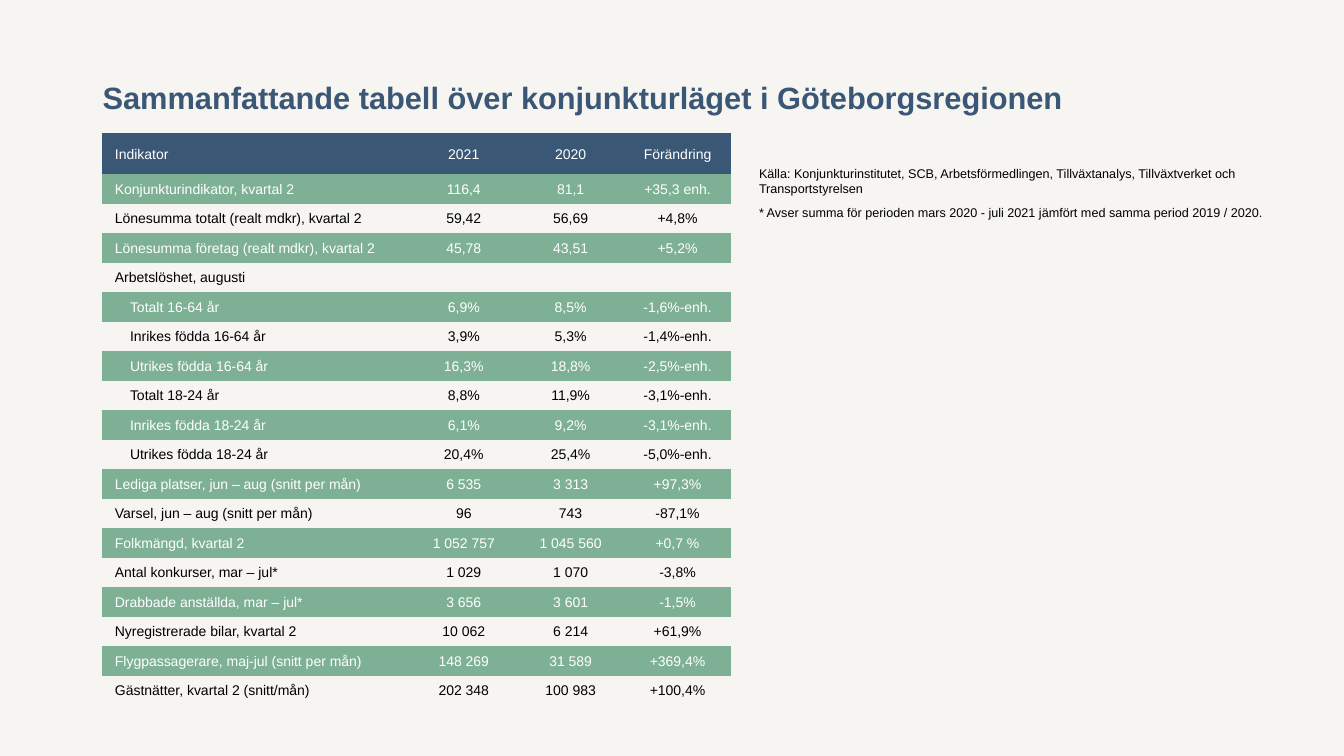
from lxml import etree
from pptx import Presentation, util as u
from pptx.dml import color
from pptx.enum import text
from pptx.oxml import ns

COLORS = {"background": "F6F5F1", "navy": "3B5776", "green": "7DB094",
          "white": "FFFFFF", "black": "000000"}
NO_GRID_STYLE = "{2D5ABB26-0587-4C30-8999-92F81FD0307C}"


def write(paragraph, words, size=10, ink="black", bold=False,
          align=text.PP_ALIGN.LEFT, spacing=None, after=0):
    paragraph.alignment = align
    paragraph.line_spacing = spacing
    paragraph.space_after = u.Pt(after)
    if not words:
        etree.SubElement(paragraph._p, ns.qn("a:endParaRPr"), sz=str(size * 100))
        return
    run = paragraph.add_run()
    run.text = words
    run.font.name = "Arial"
    run.font.size = u.Pt(size)
    run.font.bold = bold
    run.font.color.rgb = color.RGBColor.from_string(COLORS[ink])


deck = Presentation()
deck.slide_width, deck.slide_height = u.Inches(13.33), u.Inches(7.5)
slide = deck.slides.add_slide(deck.slide_layouts[6])
slide.background.fill.solid()
slide.background.fill.fore_color.rgb = color.RGBColor.from_string(COLORS["background"])

indicators = [
    ("Indikator", "2021", "2020", "Förändring"),
    ("Konjunkturindikator, kvartal 2", "116,4", "81,1", "+35,3 enh."),
    ("Lönesumma totalt (realt mdkr), kvartal 2", "59,42", "56,69", "+4,8%"),
    ("Lönesumma företag (realt mdkr), kvartal 2", "45,78", "43,51", "+5,2%"),
    ("Arbetslöshet, augusti", "", "", ""),
    ("Totalt 16-64 år", "6,9%", "8,5%", "-1,6%-enh."),
    ("Inrikes födda 16-64 år", "3,9%", "5,3%", "-1,4%-enh."),
    ("Utrikes födda 16-64 år", "16,3%", "18,8%", "-2,5%-enh."),
    ("Totalt 18-24 år", "8,8%", "11,9%", "-3,1%-enh."),
    ("Inrikes födda 18-24 år", "6,1%", "9,2%", "-3,1%-enh."),
    ("Utrikes födda 18-24 år", "20,4%", "25,4%", "-5,0%-enh."),
    ("Lediga platser, jun – aug (snitt per mån)", "6 535", "3 313", "+97,3%"),
    ("Varsel, jun – aug (snitt per mån)", "96", "743", "-87,1%"),
    ("Folkmängd, kvartal 2", "1 052 757", "1 045 560", "+0,7 %"),
    ("Antal konkurser, mar – jul*", "1 029", "1 070", "-3,8%"),
    ("Drabbade anställda, mar – jul*", "3 656", "3 601", "-1,5%"),
    ("Nyregistrerade bilar, kvartal 2", "10 062", "6 214", "+61,9%"),
    ("Flygpassagerare, maj-jul (snitt per mån)", "148 269", "31 589", "+369,4%"),
    ("Gästnätter, kvartal 2 (snitt/mån)", "202 348", "100 983", "+100,4%"),
]
unemployment_rows = range(5, 11)
table_height, header_height = 5.68, 0.41
row_height = (table_height - header_height) / (len(indicators) - 1)

summary_frame = slide.shapes.add_table(
    len(indicators), 4, u.Inches(1.01), u.Inches(1.32), u.Inches(6.24), u.Inches(table_height))
summary = summary_frame.table
summary.horz_banding = False
summary._tbl.tblPr.find(ns.qn("a:tableStyleId")).text = NO_GRID_STYLE
for column, width in zip(summary.columns, (3.06, 1.06, 1.06, 1.06)):
    column.width = u.Inches(width)

for r, indicator in enumerate(indicators):
    summary.rows[r].height = u.Inches(row_height if r else header_height)
    band = "navy" if r == 0 else "green" if r % 2 else None
    for c, value in enumerate(indicator):
        cell = summary.cell(r, c)
        indented = c == 0 and r in unemployment_rows
        cell.margin_left = u.Inches(0.28 if indented else 0.13)
        cell.margin_right = u.Inches(0.13)
        cell.margin_top = cell.margin_bottom = 0
        cell.vertical_anchor = text.MSO_ANCHOR.MIDDLE
        if band:
            cell.fill.solid()
            cell.fill.fore_color.rgb = color.RGBColor.from_string(COLORS[band])
        else:
            cell.fill.background()
        write(cell.text_frame.paragraphs[0], value, ink="white" if band else "black",
              align=text.PP_ALIGN.CENTER if c else text.PP_ALIGN.LEFT,
              spacing=1.07, after=8)

title = slide.shapes.add_textbox(
    u.Inches(0.92), u.Inches(0.4), u.Inches(11.5), u.Inches(0.8)).text_frame
title.word_wrap = True
title.vertical_anchor = text.MSO_ANCHOR.BOTTOM
write(title.paragraphs[0], "Sammanfattande tabell över konjunkturläget i Göteborgsregionen",
      size=22, ink="navy", bold=True, spacing=u.Pt(31))

sources = slide.shapes.add_textbox(
    u.Inches(7.43), u.Inches(1.6), u.Inches(5.3), u.Inches(0.64)).text_frame
sources.word_wrap = True
write(sources.paragraphs[0],
      "Källa: Konjunkturinstitutet, SCB, Arbetsförmedlingen, Tillväxtanalys, "
      "Tillväxtverket och Transportstyrelsen", size=9, after=6)
write(sources.add_paragraph(),
      "* Avser summa för perioden mars 2020 - juli 2021 jämfört med samma period 2019 / 2020.",
      size=9, after=6)

deck.save("out.pptx")
